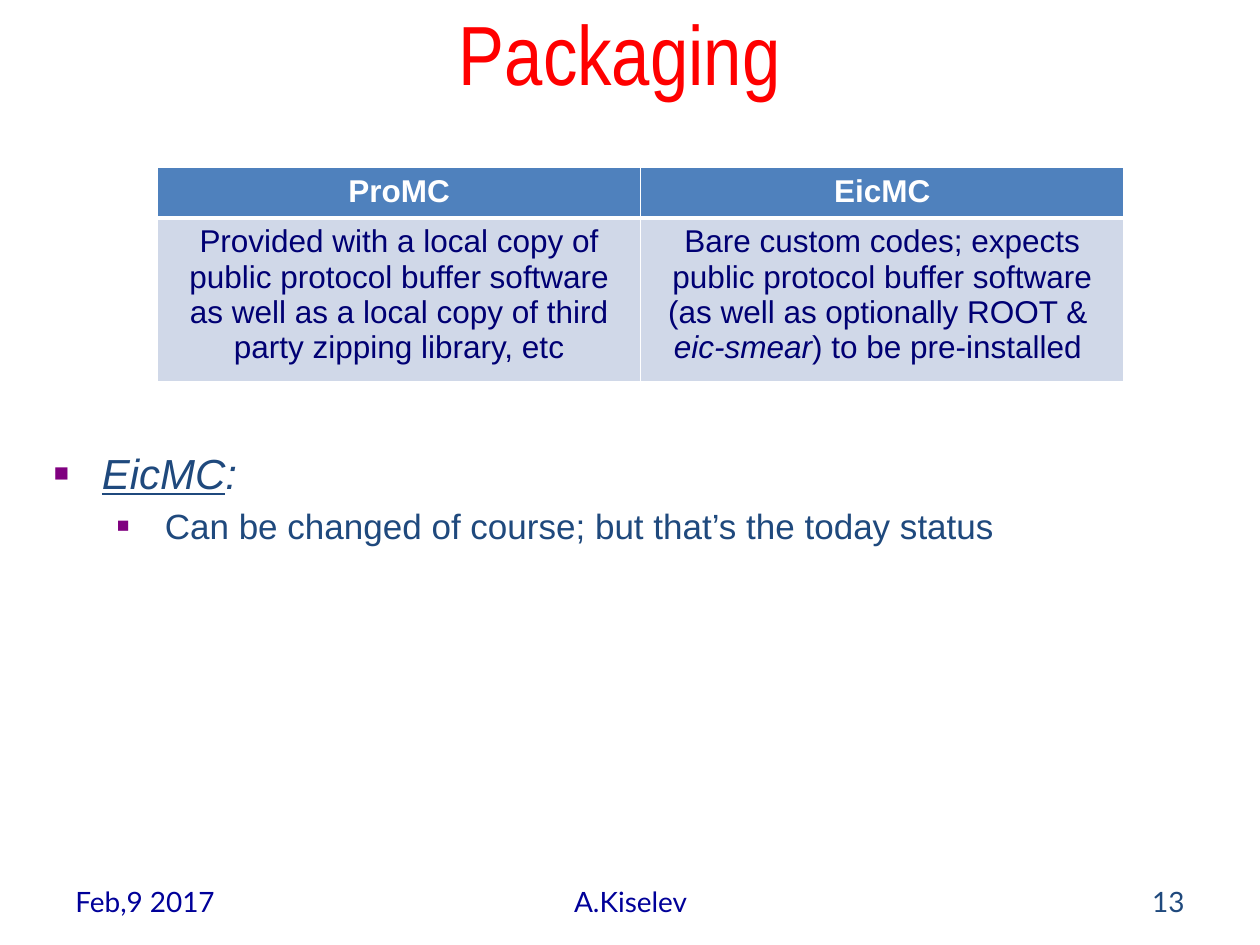
from lxml import etree
from pptx import Presentation
from pptx.dml.color import RGBColor
from pptx.enum.text import MSO_ANCHOR, PP_ALIGN
from pptx.oxml.ns import qn
from pptx.util import Inches, Pt

LEFT, CENTER, RIGHT = PP_ALIGN.LEFT, PP_ALIGN.CENTER, PP_ALIGN.RIGHT
MIDDLE = MSO_ANCHOR.MIDDLE

WHITE = RGBColor(0xFF, 0xFF, 0xFF)
RED = RGBColor(0xFF, 0x00, 0x00)
FOOTER_BLUE = RGBColor(0x00, 0x00, 0x99)
SLATE_BLUE = RGBColor(0x1F, 0x49, 0x7D)
CELL_NAVY = RGBColor(0x00, 0x00, 0x73)
HEADER_FILL = RGBColor(0x4F, 0x81, 0xBD)
BODY_FILL = RGBColor(0xD0, 0xD8, 0xE8)
PURPLE = RGBColor(0x80, 0x00, 0x80)


def style_font(font, name, size, color):
    font.name = name
    font.size = Pt(size)
    font.color.rgb = color


def add_box(slide, left, top, width, height):
    box = slide.shapes.add_textbox(Inches(left), Inches(top), Inches(width), Inches(height))
    box.text_frame.word_wrap = True
    return box.text_frame


def add_label(slide, place, text, align, font_name, size, color):
    """Add a single-paragraph text box, centred vertically."""
    frame = add_box(slide, *place)
    frame.vertical_anchor = MIDDLE
    para = frame.paragraphs[0]
    para.text = text
    para.alignment = align
    style_font(para.font, font_name, size, color)


def set_borders(cell, bottom_width):
    """Draw white borders, 1 pt except for the bottom one."""
    properties = cell._tc.get_or_add_tcPr()
    widths = {"a:lnL": 1, "a:lnR": 1, "a:lnT": 1, "a:lnB": bottom_width}
    for position, (tag, width) in enumerate(widths.items()):
        line = etree.Element(qn(tag), w=str(Pt(width)))
        fill = etree.SubElement(line, qn("a:solidFill"))
        etree.SubElement(fill, qn("a:srgbClr"), val=str(WHITE))
        properties.insert(position, line)


def fill_cell(cell, paragraphs, is_header):
    """Write paragraphs, each a list of (text, italic) spans."""
    cell.fill.solid()
    cell.fill.fore_color.rgb = HEADER_FILL if is_header else BODY_FILL
    set_borders(cell, 3 if is_header else 1)
    frame = cell.text_frame
    for index, spans in enumerate(paragraphs):
        para = frame.add_paragraph() if index else frame.paragraphs[0]
        para.alignment = CENTER
        style_font(para.font, "Arial", 18, WHITE if is_header else CELL_NAVY)
        para.font.bold = is_header
        for text, italic in spans:
            span = para.add_run()
            span.text = text
            span.font.italic = italic


def add_comparison_table(slide, rows):
    table = slide.shapes.add_table(
        2, 2, Inches(1.25), Inches(1.33), Inches(7.67), Inches(1.62)).table
    for row, height in zip(table.rows, (0.4, 1.22)):
        row.height = Inches(height)
    for row_index, row in enumerate(rows):
        for column_index, paragraphs in enumerate(row):
            fill_cell(table.cell(row_index, column_index), paragraphs, row_index == 0)


def add_bullet(para, indent):
    properties = para._p.get_or_add_pPr()
    properties.set("marL", str(Inches(indent)))
    properties.set("indent", str(Inches(-0.38)))
    color = etree.SubElement(properties, qn("a:buClr"))
    etree.SubElement(color, qn("a:srgbClr"), val=str(PURPLE))
    etree.SubElement(properties, qn("a:buSzPct"), val="60000")
    etree.SubElement(properties, qn("a:buFont"), typeface="Arial")
    etree.SubElement(properties, qn("a:buChar"), char="■")


def add_status_list(slide):
    frame = add_box(slide, 0.33, 3.5, 8.33, 1.17)

    heading = frame.paragraphs[0]
    add_bullet(heading, 0.38)
    style_font(heading.font, "Arial", 24, SLATE_BLUE)
    heading.font.italic = True
    for text, underline in (("EicMC", True), (":", False)):
        span = heading.add_run()
        span.text = text
        span.font.underline = underline

    detail = frame.add_paragraph()
    detail.text = "Can be changed of course; but that’s the today status"
    detail.space_before = Pt(4)
    add_bullet(detail, 0.88)
    style_font(detail.font, "Arial", 20, SLATE_BLUE)


def main():
    deck = Presentation()
    deck.slide_width, deck.slide_height = Inches(10), Inches(7.5)
    slide = deck.slides.add_slide(deck.slide_layouts[6])

    add_label(slide, (-0.17, 0, 10.33, 0.83), "Packaging ", CENTER, "Arial Narrow", 48, RED)
    add_comparison_table(slide, [
        [[[("ProMC", False)]], [[("EicMC", False)]]],
        [
            [[("Provided with a local copy of public protocol buffer software "
               "as well as a local copy of third party zipping library, etc", False)]],
            [[("Bare custom codes; expects public protocol buffer software "
               "(as well as optionally ROOT & ", False)],
             [("eic-smear", True), (") to be pre-installed ", False)]],
        ],
    ])
    add_status_list(slide)

    footers = (
        (0.5, 2.33, "Feb,9 2017", LEFT, FOOTER_BLUE),
        (3.42, 3.17, "A.Kiselev", CENTER, FOOTER_BLUE),
        (7.17, 2.33, "13", RIGHT, SLATE_BLUE),
    )
    for left, width, text, align, color in footers:
        add_label(slide, (left, 6.95, width, 0.4), text, align, "Lato", 16, color)

    deck.save("out.pptx")


if __name__ == "__main__":
    main()
